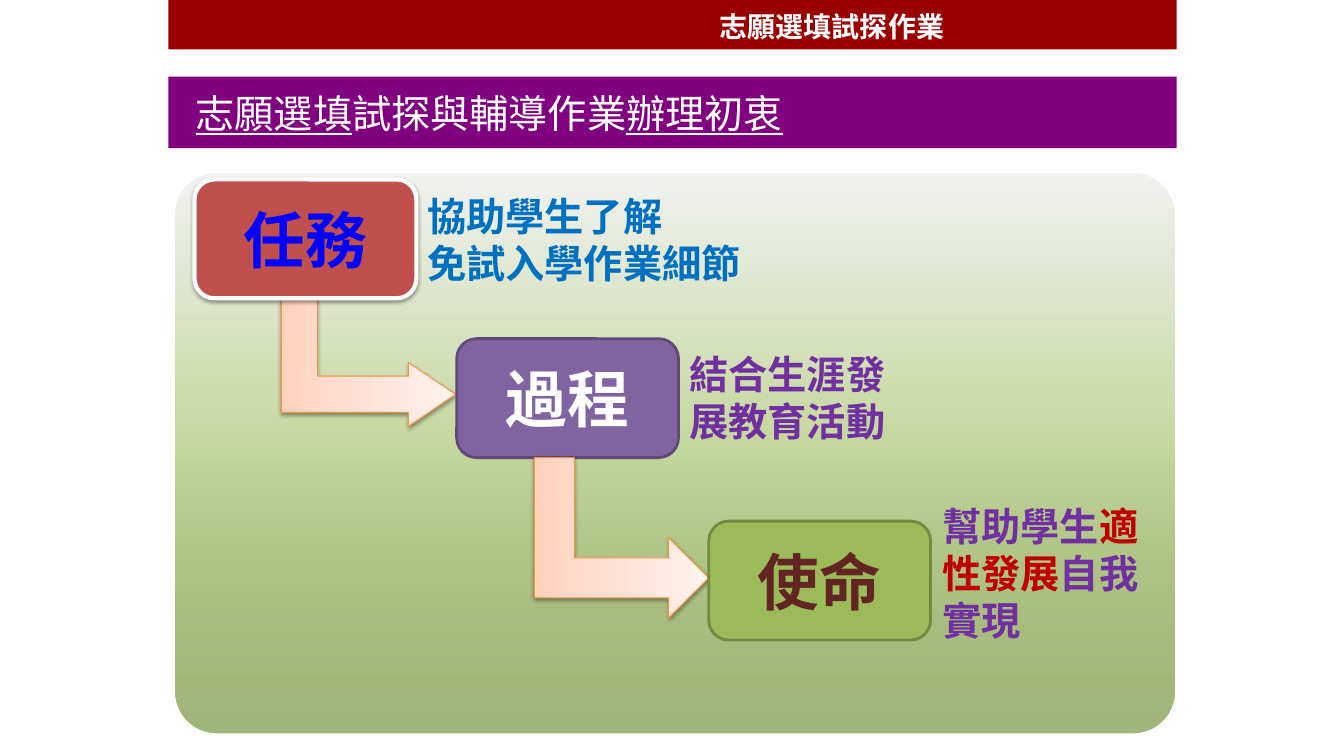
"""Build the slide on the purpose of the trial preference-selection exercise."""
from typing import NamedTuple, Optional

from lxml.etree import SubElement
from pptx import Presentation
from pptx.dml.color import RGBColor
from pptx.enum.shapes import MSO_SHAPE
from pptx.enum.text import MSO_ANCHOR, PP_ALIGN
from pptx.oxml.ns import qn
from pptx.util import Inches, Pt

FONT = "Noto Sans CJK SC"
WHITE = RGBColor(0xFF, 0xFF, 0xFF)
DARK_RED = RGBColor(0x99, 0x00, 0x00)
PURPLE = RGBColor(0x80, 0x00, 0x80)
BRICK = RGBColor(0xC0, 0x50, 0x4D)
VIOLET = RGBColor(0x80, 0x64, 0xA2)
VIOLET_EDGE = RGBColor(0x5F, 0x4A, 0x78)
GREEN = RGBColor(0x9B, 0xBB, 0x59)
GREEN_EDGE = RGBColor(0x73, 0x8A, 0x42)
BLUE = RGBColor(0x00, 0x00, 0xFF)
MAROON = RGBColor(0x63, 0x25, 0x23)
SKY = RGBColor(0x00, 0x70, 0xC0)
GRAPE = RGBColor(0x70, 0x30, 0xA0)
RED = RGBColor(0xC0, 0x00, 0x00)
ORANGE = RGBColor(0xF6, 0x92, 0x40)


class Box(NamedTuple):
    left: float
    top: float
    width: float
    height: float


class Span(NamedTuple):
    text: str
    color: RGBColor
    underline: bool = False


class Stop(NamedTuple):
    pos: int
    color: RGBColor
    alpha: int = 100


class Stage(NamedTuple):
    name: str
    left: float
    top: float
    fill: RGBColor
    edge: RGBColor
    edge_width: float
    name_color: RGBColor
    shadow: bool
    caption_box: Box
    caption: list[list[Span]]


class Arrow(NamedTuple):
    box: Box
    adjustments: tuple[float, float, float]


PANEL_STOPS = [
    Stop(0, RGBColor(0x77, 0x93, 0x3C), 68),
    Stop(50, RGBColor(0xC3, 0xD6, 0x9B)),
    Stop(100, RGBColor(0xF2, 0xF2, 0xF2)),
]
ARROW_STOPS = [
    Stop(0, RGBColor(0xFF, 0xD2, 0xBD)),
    Stop(35, RGBColor(0xFF, 0xDE, 0xD0)),
    Stop(100, RGBColor(0xFF, 0xF2, 0xED)),
]
STAGES = [
    Stage("任務", 1.93, 1.78, BRICK, WHITE, 3, BLUE, True, Box(4.14, 1.86, 3.47, 1.04),
          [[Span("協助學生了解", SKY)], [Span("免試入學作業細節", SKY)]]),
    Stage("過程", 4.53, 3.36, VIOLET, VIOLET_EDGE, 2, WHITE, False, Box(6.74, 3.43, 2.36, 1.04),
          [[Span("結合生涯發", GRAPE)], [Span("展教育活動", GRAPE)]]),
    Stage("使命", 7.03, 5.17, GREEN, GREEN_EDGE, 2, MAROON, False, Box(9.25, 4.93, 2.36, 1.51),
          [[Span("幫助學生", GRAPE), Span("適性發展", RED), Span("自我實現", GRAPE)]]),
]
ARROWS = [
    Arrow(Box(3.02, 2.73, 1.27, 1.73), (0.283, 0.25, 0.37)),
    Arrow(Box(5.37, 4.47, 1.59, 1.73), (0.25, 0.25, 0.25)),
]


def add_box(s, kind: MSO_SHAPE, box: Box, fill: Optional[RGBColor] = None,
            edge: Optional[RGBColor] = None, edge_width: float = 0):
    sp = s.shapes.add_shape(kind, *map(Inches, box))
    sp.shadow.inherit = False
    if fill is not None:
        sp.fill.solid()
        sp.fill.fore_color.rgb = fill
    if edge is None:
        sp.line.fill.background()
    else:
        sp.line.color.rgb = edge
        sp.line.width = Pt(edge_width)
    return sp


def add_gradient(sp, stops: list[Stop]) -> None:
    sp.fill.gradient()
    sp.fill.gradient_angle = 90
    gs_list = sp._element.spPr.find(qn("a:gradFill")).find(qn("a:gsLst"))
    for gs in list(gs_list):
        gs_list.remove(gs)
    for stop in stops:
        gs = SubElement(gs_list, qn("a:gs"), pos=str(stop.pos * 1000))
        color = SubElement(gs, qn("a:srgbClr"), val=str(stop.color))
        if stop.alpha < 100:
            SubElement(color, qn("a:alpha"), val=str(stop.alpha * 1000))


def add_shadow(sp) -> None:
    effects = sp._element.spPr.find(qn("a:effectLst"))
    shadow = SubElement(effects, qn("a:outerShdw"), blurRad=str(Pt(3.1)), dist=str(Pt(1.6)),
                        dir="5400000", rotWithShape="0")
    color = SubElement(shadow, qn("a:srgbClr"), val="000000")
    SubElement(color, qn("a:alpha"), val="38000")


def write(sp, paragraphs: list[list[Span]], size: float, bold: bool = True,
          align: PP_ALIGN = PP_ALIGN.LEFT, anchor: MSO_ANCHOR = MSO_ANCHOR.TOP) -> None:
    tf = sp.text_frame
    tf.word_wrap = True
    tf.vertical_anchor = anchor
    for i, spans in enumerate(paragraphs):
        p = tf.add_paragraph() if i else tf.paragraphs[0]
        p.alignment = align
        p.line_spacing = Pt(size * 1.2)
        for span in spans:
            r = p.add_run()
            r.text = span.text
            r.font.size = Pt(size)
            r.font.bold = bold
            r.font.underline = span.underline
            r.font.color.rgb = span.color
            r.font.name = FONT
            SubElement(r._r.get_or_add_rPr(), qn("a:ea"), typeface=FONT)


def add_text(s, box: Box, paragraphs: list[list[Span]], size: float) -> None:
    write(s.shapes.add_textbox(*map(Inches, box)), paragraphs, size)


def add_heading(s) -> None:
    add_box(s, MSO_SHAPE.RECTANGLE, Box(1.67, 0, 10, 0.49), DARK_RED)
    add_text(s, Box(7.04, 0.05, 4.43, 0.44), [[Span("志願選填試探作業", WHITE)]], 20)
    sp = add_box(s, MSO_SHAPE.RECTANGLE, Box(1.67, 0.76, 10, 0.71), PURPLE)
    sp.text_frame.margin_left = Inches(0.27)
    spans = [Span("志願選填", WHITE, True), Span("試探與輔導作業", WHITE),
             Span("辦理初衷", WHITE, True)]
    write(sp, [spans], 28, False, PP_ALIGN.LEFT, MSO_ANCHOR.MIDDLE)


def add_arrow(s, arrow: Arrow) -> None:
    sp = add_box(s, MSO_SHAPE.BENT_UP_ARROW, arrow.box, None, ORANGE, 0.75)
    for i, value in enumerate(arrow.adjustments):
        sp.adjustments[i] = value
    sp.rotation = 270
    xfrm = sp._element.spPr.find(qn("a:xfrm"))
    xfrm.set("flipH", "1")
    xfrm.set("flipV", "1")
    add_gradient(sp, ARROW_STOPS)
    add_shadow(sp)


def add_stage(s, stage: Stage) -> None:
    sp = add_box(s, MSO_SHAPE.ROUNDED_RECTANGLE, Box(stage.left, stage.top, 2.2, 1.18),
                 stage.fill, stage.edge, stage.edge_width)
    if stage.shadow:
        add_shadow(sp)
    write(sp, [[Span(stage.name, stage.name_color)]], 44, True,
          PP_ALIGN.CENTER, MSO_ANCHOR.MIDDLE)
    add_text(s, stage.caption_box, stage.caption, 28)


def main() -> None:
    prs = Presentation()
    prs.slide_width, prs.slide_height = Inches(13.33), Inches(7.5)
    s = prs.slides.add_slide(prs.slide_layouts[6])
    panel = add_box(s, MSO_SHAPE.ROUNDED_RECTANGLE, Box(1.72, 1.7, 9.95, 5.59), None, WHITE, 2)
    panel.adjustments[0] = 0.077
    add_gradient(panel, PANEL_STOPS)
    add_heading(s)
    task, process, mission = STAGES
    to_process, to_mission = ARROWS
    add_arrow(s, to_process)
    add_stage(s, task)
    add_stage(s, process)
    add_arrow(s, to_mission)
    add_stage(s, mission)
    prs.save("out.pptx")


if __name__ == "__main__":
    main()
